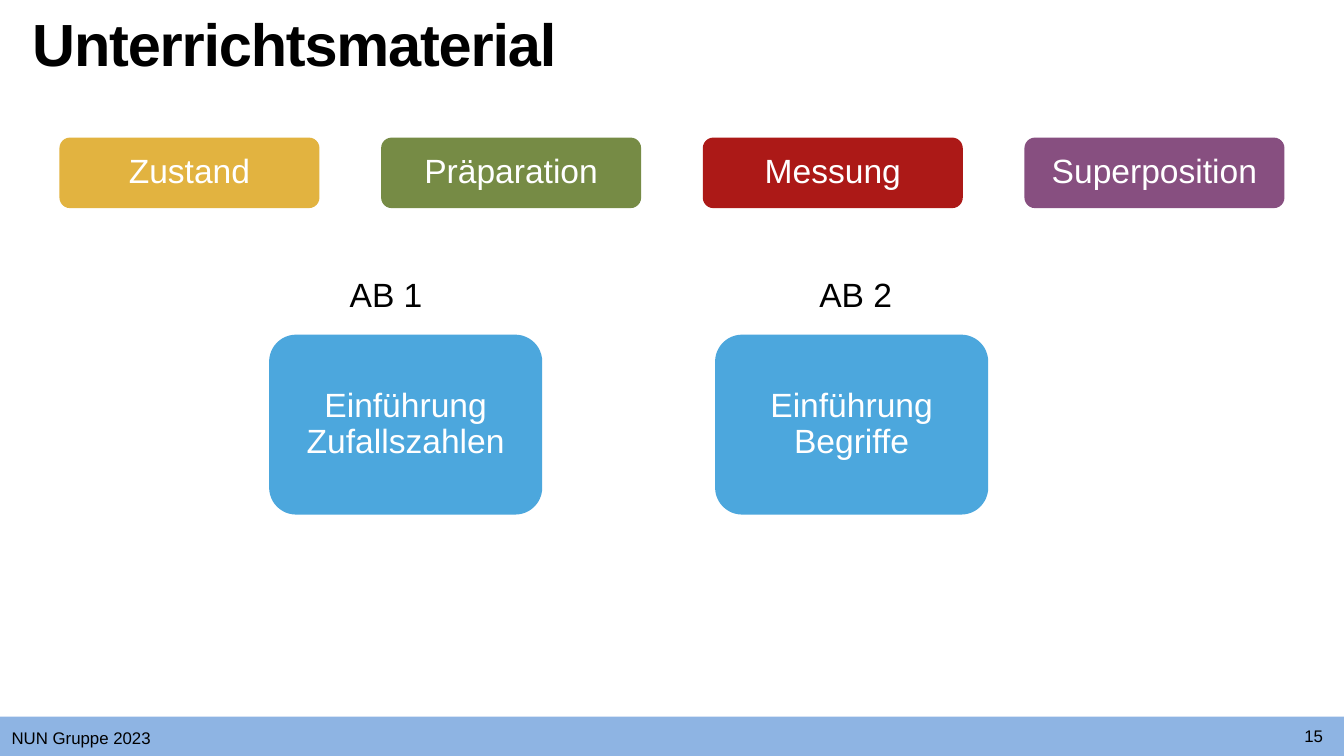
"""Builds the slide on teaching material with its topics and worksheets."""
import dataclasses

import pptx
import pptx.dml.color
import pptx.enum.shapes
import pptx.enum.text
import pptx.util

Inches = pptx.util.Inches
Kind = pptx.enum.shapes.MSO_SHAPE
Align = pptx.enum.text.PP_ALIGN
Anchor = pptx.enum.text.MSO_ANCHOR


@dataclasses.dataclass(frozen=True)
class Theme:
    font: str = "Arial"
    black: str = "000000"
    white: str = "FFFFFF"
    bar: str = "8EB4E3"
    gold: str = "E2B340"
    green: str = "768B45"
    red: str = "AC1917"
    plum: str = "874F80"
    blue: str = "4CA7DD"
    head: int = 85
    body: int = 48
    small: int = 24


THEME = Theme()


def color(code):
    return pptx.dml.color.RGBColor.from_string(code)


def write(shape, text, size=THEME.body, ink=THEME.black, bold=False,
          align=Align.LEFT, anchor=Anchor.MIDDLE, line=0.9, track=None,
          wrap=True, inset=0.06):
    frame = shape.text_frame
    frame.auto_size = pptx.enum.text.MSO_AUTO_SIZE.NONE
    frame.word_wrap = wrap
    frame.vertical_anchor = anchor
    frame.margin_left = frame.margin_right = Inches(inset)
    frame.margin_top = frame.margin_bottom = Inches(inset)
    para = frame.paragraphs[0]
    para.alignment = align
    para.line_spacing = line
    para.space_before = pptx.util.Pt(0)
    run = para.add_run()
    run.text = text
    run.font.name = THEME.font
    run.font.size = pptx.util.Pt(size)
    run.font.bold = bold
    run.font.color.rgb = color(ink)
    if track is not None:
        run._r.get_or_add_rPr().set("spc", str(round(track * 100)))


def place(shape, left, top, width, height):
    shape.left, shape.top = Inches(left), Inches(top)
    shape.width, shape.height = Inches(width), Inches(height)


def label(slide, text, left, top, width, height, **style):
    box = slide.shapes.add_textbox(
        Inches(left), Inches(top), Inches(width), Inches(height))
    write(box, text, **style)


def block(slide, kind, fill, left, top, width, height):
    shape = slide.shapes.add_shape(
        kind, Inches(left), Inches(top), Inches(width), Inches(height))
    shape.shadow.inherit = False
    shape.fill.solid()
    shape.fill.fore_color.rgb = color(fill)
    shape.line.fill.background()
    return shape


def card(slide, text, fill, left, top, width, height, inset):
    shape = block(slide, Kind.ROUNDED_RECTANGLE, fill,
                  left, top, width, height)
    shape.adjustments[0] = 0.15
    write(shape, text, ink=THEME.white, align=Align.CENTER, inset=inset)


def footer(slide, wide):
    block(slide, Kind.RECTANGLE, THEME.bar, 0, 14.22, wide, 0.78)
    label(slide, "NUN Gruppe 2023", 0.18, 14.39, 4.44, 0.7,
          size=THEME.small, anchor=Anchor.TOP, line=1.0, inset=0.05)
    label(slide, "15", 25.82, 14.36, 0.5, 0.5, size=THEME.small,
          align=Align.CENTER, anchor=Anchor.BOTTOM, line=1.0, wrap=False)


def topics(slide):
    names = (("Zustand", THEME.gold), ("Präparation", THEME.green),
             ("Messung", THEME.red), ("Superposition", THEME.plum))
    for i, (name, fill) in enumerate(names):
        card(slide, name, fill, 1.18 + 6.383 * i, 2.73, 5.16, 1.4, 0.06)


def sheets(slide):
    items = (("AB 1", 6.88, "Einführung Zufallszahlen", 5.34),
             ("AB 2", 16.2, "Einführung Begriffe", 14.19))
    for name, start, topic, left in items:
        label(slide, name, start, 5.45, 1.57, 0.88, wrap=False)
        card(slide, topic, THEME.blue, left, 6.64, 5.42, 3.57, 0.1)


def main():
    deck = pptx.Presentation()
    deck.slide_width, deck.slide_height = Inches(26.67), Inches(15)
    slide = deck.slides.add_slide(deck.slide_layouts[5])
    footer(slide, 26.67)
    title = slide.shapes.title
    place(title, 0.58, 0.35, 24.03, 1.57)
    write(title, "Unterrichtsmaterial", size=THEME.head, bold=True,
          anchor=Anchor.TOP, line=0.8, track=-1.7)
    topics(slide)
    sheets(slide)
    deck.save("out.pptx")


if __name__ == "__main__":
    main()
